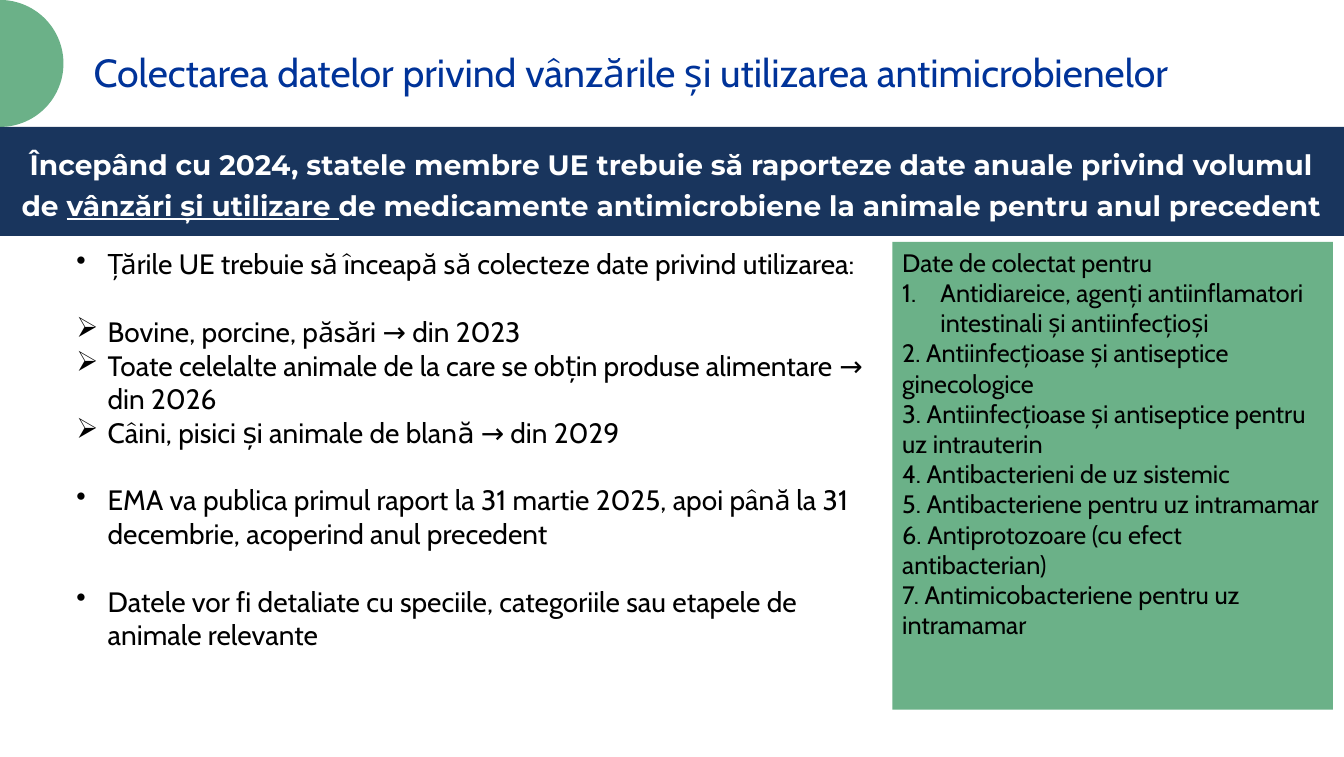
from math import cos, pi, sin

from lxml import etree
from pptx import Presentation
from pptx.dml.color import RGBColor
from pptx.enum import shapes, text
from pptx.oxml.ns import qn
from pptx.util import Inches, Pt

GREEN, NAVY, BLUE, BLACK, WHITE = "6BB188", "19355D", "003399", "000000", "FFFFFF"
LINE = 24.3

BANNER = [
    ("Începând cu 2024, statele membre UE trebuie să raporteze date anuale privind volumul de ", False),
    ("vânzări și utilizare ", True),
    ("de medicamente antimicrobiene la animale pentru anul precedent", False),
]
POINTS = [
    ("•", 0, "Țările UE trebuie să înceapă să colecteze date privind utilizarea:"),
    ("➢", LINE, "Bovine, porcine, păsări → din 2023"),
    ("➢", 0, "Toate celelalte animale de la care se obțin produse alimentare → din 2026"),
    ("➢", 0, "Câini, pisici și animale de blană → din 2029"),
    ("•", LINE, "EMA va publica primul raport la 31 martie 2025, apoi până la 31 decembrie, "
     "acoperind anul precedent"),
    ("•", LINE, "Datele vor fi detaliate cu speciile, categoriile sau etapele de animale relevante"),
]
GROUPS = [
    "2. Antiinfecțioase și antiseptice ginecologice",
    "3. Antiinfecțioase și antiseptice pentru uz intrauterin",
    "4. Antibacterieni de uz sistemic",
    "5. Antibacteriene pentru uz intramamar",
    "6. Antiprotozoare (cu efect antibacterian)",
    "7. Antimicobacteriene pentru uz intramamar",
]


def tint(hue):
    """Turn a hex string into a colour."""
    return RGBColor.from_string(hue)


def paint(shape, hue):
    """Give a shape a plain fill without line or shadow."""
    shape.fill.solid()
    shape.fill.fore_color.rgb = tint(hue)
    shape.line.fill.background()
    shape.shadow.inherit = False


def block(slide, box, hue):
    """Add a filled rectangle with a wrapping, top-anchored frame."""
    shape = slide.shapes.add_shape(shapes.MSO_SHAPE.RECTANGLE, *map(Inches, box))
    paint(shape, hue)
    frame = shape.text_frame
    frame.word_wrap = True
    frame.vertical_anchor = text.MSO_ANCHOR.TOP
    return frame


def label(slide, box):
    """Add a wrapping text box and return its frame."""
    frame = slide.shapes.add_textbox(*map(Inches, box)).text_frame
    frame.word_wrap = True
    return frame


def write(frame, runs, size=20, font="Cabin", hue=BLACK, bold=False, align="LEFT",
          lead=1.0, before=0, mark=None, hang=0.31):
    """Add one paragraph, given as a string or as (words, underline) runs."""
    para = frame.paragraphs[0]
    if para.runs:
        para = frame.add_paragraph()
    para.alignment = getattr(text.PP_ALIGN, align)
    para.line_spacing = lead
    para.space_before = Pt(before)
    for words, under in [(runs, False)] if isinstance(runs, str) else runs:
        run = para.add_run()
        run.text = words
        run.font.size, run.font.name = Pt(size), font
        run.font.bold, run.font.underline = bold, under
        run.font.color.rgb = tint(hue)
    if mark:
        props = para._p.get_or_add_pPr()
        props.set("marL", str(Inches(hang)))
        props.set("indent", str(-Inches(hang)))
        if mark == "1.":
            etree.SubElement(props, qn("a:buAutoNum"), type="arabicPeriod")
        else:
            etree.SubElement(props, qn("a:buChar"), char=mark)


def corner(slide, left, top, rad):
    """Draw the half disc that bulges to the right."""
    turns = [pi * (i / 60 - 0.5) for i in range(61)]
    rim = [(Inches(left + rad * cos(a)), Inches(top + rad + rad * sin(a))) for a in turns]
    form = slide.shapes.build_freeform(*rim[0])
    form.add_line_segments(rim[1:], close=True)
    paint(form.convert_to_shape(), GREEN)


def title(slide, box):
    """Write the slide title."""
    write(label(slide, box), "Colectarea datelor privind vânzările și utilizarea antimicrobienelor",
          size=28, hue=BLUE, lead=1.2)


def banner(slide, box):
    """Draw the dark band with the key message."""
    frame = block(slide, box, NAVY)
    frame.vertical_anchor = text.MSO_ANCHOR.MIDDLE
    write(frame, BANNER, font="Montserrat", hue=WHITE, bold=True, align="CENTER", lead=1.2)


def points(slide, box):
    """Write the bulleted list of deadlines."""
    frame = label(slide, box)
    for mark, gap, words in POINTS:
        write(frame, words, mark=mark, before=gap)


def panel(slide, box):
    """Draw the green panel that lists the product groups."""
    frame = block(slide, box, GREEN)
    write(frame, "Date de colectat pentru", size=18)
    write(frame, "Antidiareice, agenți antiinflamatori intestinali și antiinfecțioși",
          size=18, mark="1.", hang=0.38)
    for words in GROUPS:
        write(frame, words, size=18)


def main():
    """Build the slide and save it."""
    deck = Presentation()
    deck.slide_width, deck.slide_height = Inches(13.33), Inches(7.51)
    slide = deck.slides.add_slide(deck.slide_layouts[6])
    corner(slide, 0, 0, 0.63)
    banner(slide, (-0.02, 1.26, 13.36, 1.08))
    title(slide, (0.83, 0.34, 11.25, 0.58))
    points(slide, (0.66, 2.4, 8.05, 4.14))
    panel(slide, (8.85, 2.4, 4.37, 4.64))
    deck.save("out.pptx")


if __name__ == "__main__":
    main()
